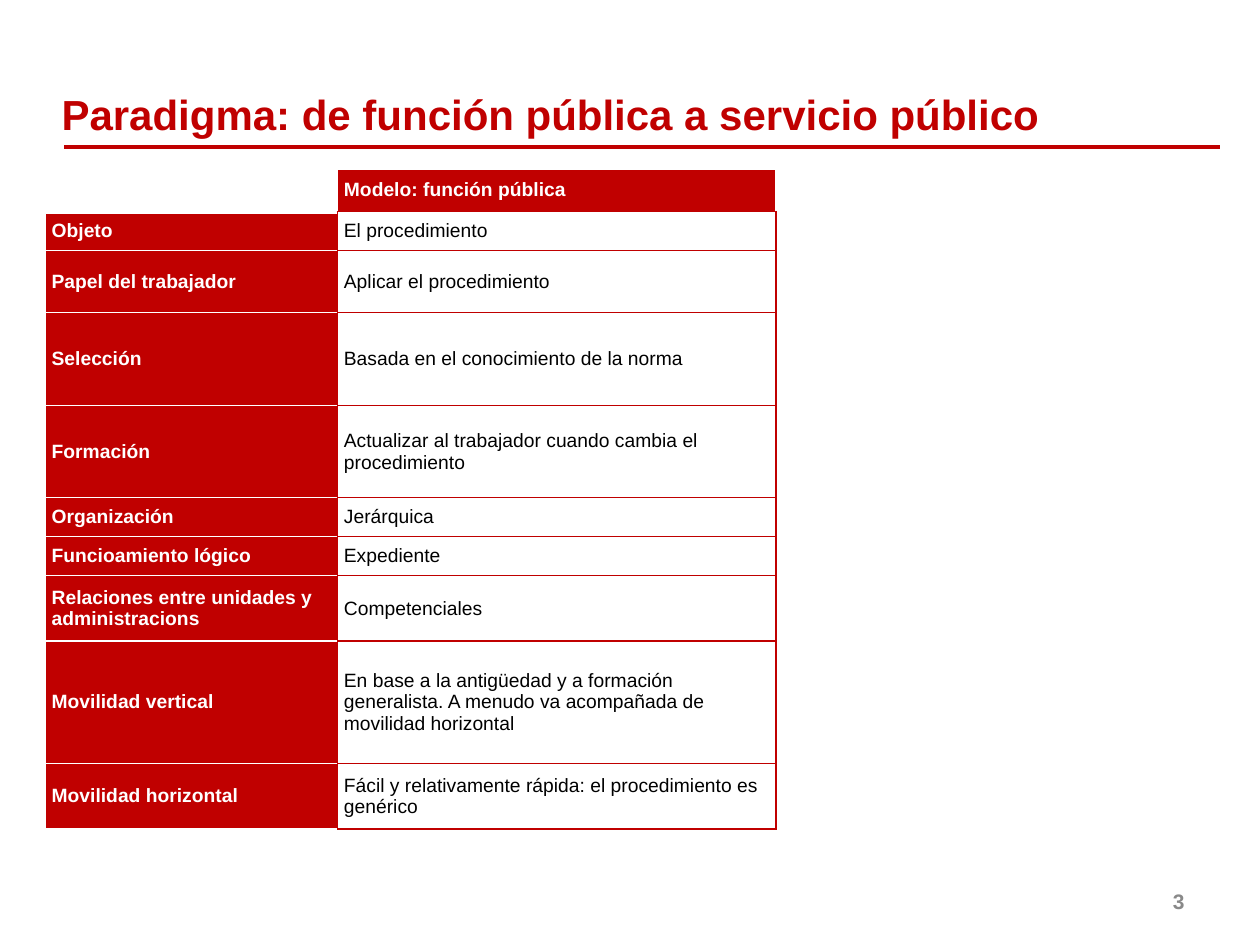
from pptx import Presentation
from pptx import util as u
from pptx.dml.color import RGBColor
from pptx.enum import shapes, text
from pptx.oxml import parse_xml
from pptx.oxml.ns import nsdecls, qn
from lxml import etree

theme = dict(red="C00000", white="FFFFFF", black="000000", grey="898989",
             font="Arial", title=24, cell=11, number=12)

prs = Presentation()
prs.slide_width, prs.slide_height = u.Inches(10), u.Inches(7.5)
W, H = prs.slide_width / 100, prs.slide_height / 100  # one percent of the slide
s = prs.slides.add_slide(prs.slide_layouts[6])


def write(tf, words, size, color, bold=True, align=text.PP_ALIGN.LEFT):
    tf.word_wrap = True
    p = tf.paragraphs[0]
    p.alignment = align
    r = p.add_run()
    r.text = words
    r.font.name, r.font.size, r.font.bold = theme["font"], u.Pt(size), bold
    r.font.color.rgb = RGBColor.from_string(theme[color])


def style_cell(cell, fill, borders):
    """Fill a cell and draw its borders, given as (colour, points) for L, R, T, B."""
    tcPr = cell._tc.get_or_add_tcPr()
    for side, (color, points) in zip("LRTB", borders):
        tcPr.append(parse_xml(
            f'<a:ln{side} {nsdecls("a")} w="{u.Pt(points)}"><a:solidFill>'
            f'<a:srgbClr val="{theme[color]}"/></a:solidFill></a:ln{side}>'))
    cell.fill.solid()
    cell.fill.fore_color.rgb = RGBColor.from_string(theme[fill])


# Rule under the title
rule_y = int(15.6 * H)
ln = s.shapes.add_connector(shapes.MSO_CONNECTOR.STRAIGHT,
                            int(5.1 * W), rule_y, int(96.8 * W), rule_y)
ln.line.color.rgb = RGBColor.from_string(theme["red"])
ln.line.width = u.Pt(2.25)
etree.SubElement(ln._element.spPr, qn("a:effectLst"))

# Comparison table: label, description, row height in inches
rows = [
    ("", "Modelo: función pública", 0.34),
    ("Objeto", "El procedimiento", 0.31),
    ("Papel del trabajador", "Aplicar el procedimiento", 0.49),
    ("Selección", "Basada en el conocimiento de la norma", 0.74),
    ("Formación", "Actualizar al trabajador cuando cambia el procedimiento", 0.73),
    ("Organización", "Jerárquica", 0.31),
    ("Funcioamiento lógico", "Expediente", 0.31),
    ("Relaciones entre unidades y administracions", "Competenciales", 0.52),
    ("Movilidad vertical", "En base a la antigüedad y a formación generalista. "
     "A menudo va acompañada de movilidad horizontal", 0.97),
    ("Movilidad horizontal",
     "Fácil y relativamente rápida: el procedimiento es genérico", 0.52),
]
white, red, thick = ("white", 1), ("red", 1), ("white", 3)
gf = s.shapes.add_table(len(rows), 2, int(3.6 * W), u.Inches(1.34), int(58 * W),
                        u.Inches(sum(row[2] for row in rows)))
tbl = gf.table
tbl.first_row = tbl.horz_banding = False
for col, share in zip(tbl.columns, (23.2, 34.8)):
    col.width = int(share * W)

for i, (*words, height) in enumerate(rows):
    tbl.rows[i].height = u.Inches(height)
    for j, content in enumerate(words):
        cell = tbl.cell(i, j)
        cell.vertical_anchor = text.MSO_ANCHOR.MIDDLE
        cell.margin_left = cell.margin_right = u.Inches(0.05)
        cell.margin_top = cell.margin_bottom = 0
        if i == 0:  # header row
            fill, color = ("white", "red")[j], "white"
            borders = (white, white, white, (thick, red)[j])
        elif j == 0:  # row labels
            fill, color = "red", "white"
            borders = (white, red, thick if i == 1 else white, white)
        else:  # descriptions
            fill, color = "white", "black"
            borders = (red,) * 4
        style_cell(cell, fill, borders)
        if content:
            write(cell.text_frame, content, theme["cell"], color, bold=color == "white")

# Title and page number
for left, top, width, height, words, size, color, align in (
        (3.9, 8.4, 96.1, 7.3, "Paradigma: de función pública a servicio público",
         theme["title"], "red", text.PP_ALIGN.LEFT),
        (71.7, 92.7, 23.3, 5.3, "3", theme["number"], "grey", text.PP_ALIGN.RIGHT)):
    sp = s.shapes.add_textbox(int(left * W), int(top * H), int(width * W), int(height * H))
    sp.text_frame.vertical_anchor = text.MSO_ANCHOR.MIDDLE
    write(sp.text_frame, words, size, color, align=align)

prs.save("out.pptx")
